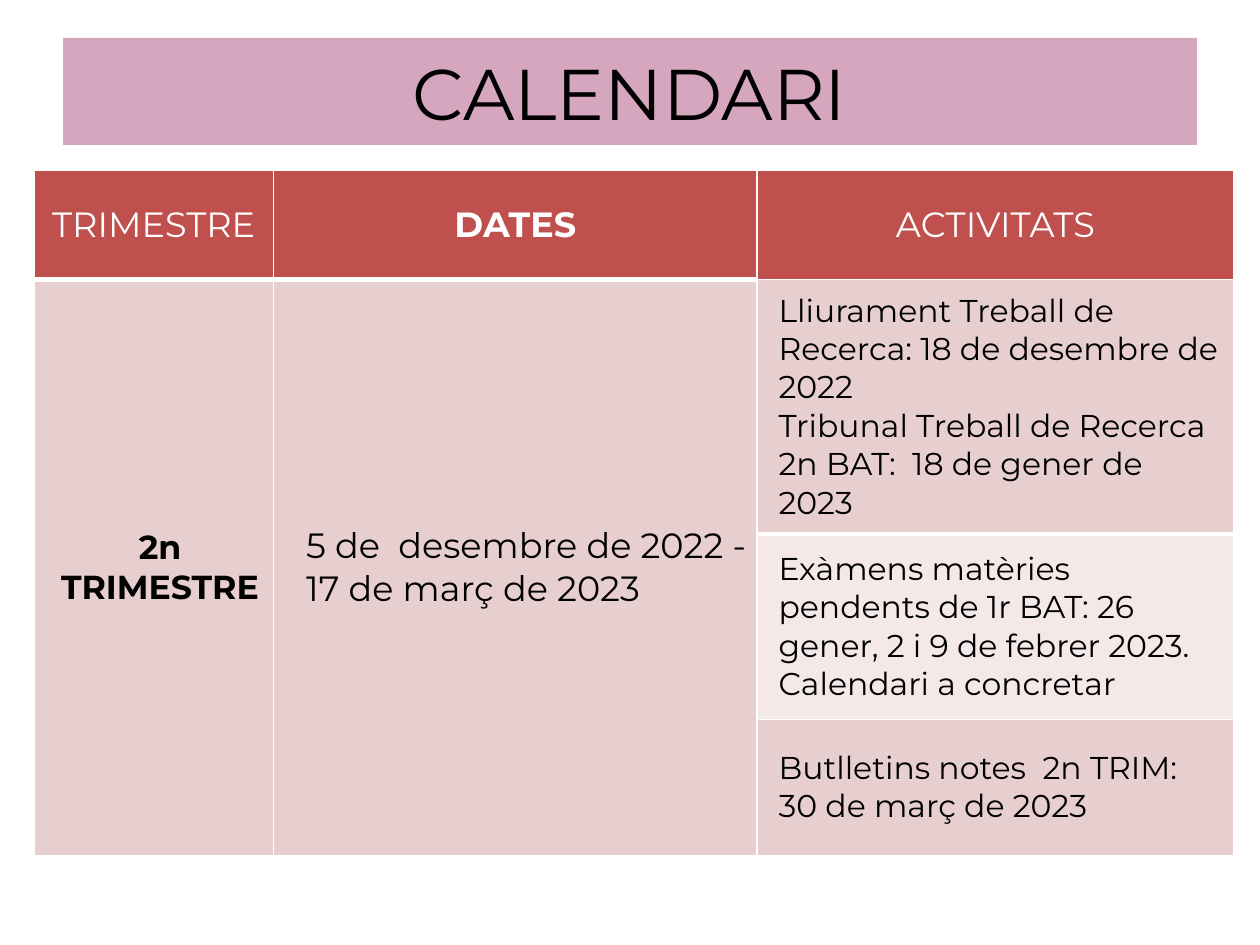
from lxml import etree
from pptx import Presentation
from pptx.dml.color import RGBColor
from pptx.enum.text import MSO_ANCHOR, PP_ALIGN
from pptx.oxml.ns import qn
from pptx.util import Inches, Pt

CENTER, LEFT = PP_ALIGN.CENTER, PP_ALIGN.LEFT
MIDDLE = MSO_ANCHOR.MIDDLE
FONT = "Montserrat"
WHITE, BLACK = "FFFFFF", "000000"
RED, ROSE, PALE, MAUVE = "C0504D", "E8CFCF", "F4E8E8", "D5A6BD"
COLS = [1.9, 3.84, 3.78]
ROWS = [0.87, 2.02, 1.47, 1.08]
HEADERS = [("TRIMESTRE", False), ("DATES", True), ("ACTIVITATS", False)]
DATES = ["5 de  desembre de 2022 -", "17 de març de 2023"]
ACTIVITIES = [
    (["Lliurament Treball de Recerca: 18 de desembre de 2022",
      "Tribunal Treball de Recerca 2n BAT:  18 de gener de 2023"], ROSE),
    (["Exàmens matèries pendents de 1r BAT: 26 gener, 2 i 9 de febrer 2023.",
      "Calendari a concretar"], PALE),
    (["Butlletins notes  2n TRIM:", "30 de març de 2023"], ROSE),
]


def rgb(value):
    return RGBColor.from_string(value)


def write(tf, lines, size, color=BLACK, bold=False, align=LEFT, margin=0, indent=0):
    tf.word_wrap = True
    for i, line in enumerate(lines):
        p = tf.paragraphs[0] if i == 0 else tf.add_paragraph()
        p.alignment = align
        pPr = p._p.get_or_add_pPr()
        pPr.set("marL", str(Inches(margin)))
        pPr.set("indent", str(Inches(indent)))
        r = p.add_run()
        r.text = line
        r.font.name, r.font.size, r.font.bold = FONT, Pt(size), bold
        r.font.color.rgb = rgb(color)


def set_borders(cell, top=1, bottom=1):
    tcPr = cell._tc.get_or_add_tcPr()
    widths = {"a:lnL": 1, "a:lnR": 1, "a:lnT": top, "a:lnB": bottom}
    for i, (tag, width) in enumerate(widths.items()):
        ln = etree.Element(qn(tag), w=str(Pt(width)))
        fill = etree.SubElement(ln, qn("a:solidFill"))
        etree.SubElement(fill, qn("a:srgbClr"), val=WHITE)
        tcPr.insert(i, ln)


def fill_cell(cell, lines, size, fill, side=0.07, top=1, bottom=1, **style):
    cell.fill.solid()
    cell.fill.fore_color.rgb = rgb(fill)
    cell.vertical_anchor = MIDDLE
    cell.margin_left = cell.margin_right = Inches(side)
    cell.margin_top = cell.margin_bottom = Inches(0.05)
    write(cell.text_frame, lines, size, **style)
    set_borders(cell, top, bottom)


def add_title(s, left, top, width, height):
    sp = s.shapes.title
    sp.left, sp.top, sp.width, sp.height = map(Inches, (left, top, width, height))
    sp.fill.solid()
    sp.fill.fore_color.rgb = rgb(MAUVE)
    sp.text_frame.vertical_anchor = MIDDLE
    write(sp.text_frame, ["CALENDARI"], 41, align=CENTER)


def add_calendar(s, left, top):
    frame = s.shapes.add_table(len(ROWS), len(COLS), Inches(left), Inches(top),
                               Inches(sum(COLS)), Inches(sum(ROWS)))
    table = frame.table
    for col, width in zip(table.columns, COLS):
        col.width = Inches(width)
    for row, height in zip(table.rows, ROWS):
        row.height = Inches(height)
    for c in (0, 1):
        table.cell(1, c).merge(table.cell(len(ROWS) - 1, c))
    for c, (text, bold) in enumerate(HEADERS):
        fill_cell(table.cell(0, c), [text], 20, RED, side=0.1, bottom=3 if c < 2 else 1,
                  color=WHITE, bold=bold, align=CENTER)
    fill_cell(table.cell(1, 0), ["2n TRIMESTRE"], 19, ROSE, side=0.1, top=3,
              bold=True, align=CENTER, margin=0.1)
    fill_cell(table.cell(1, 1), DATES, 20, ROSE, top=3, margin=0.1, indent=0.09)
    for i, (lines, fill) in enumerate(ACTIVITIES):
        fill_cell(table.cell(i + 1, 2), lines, 18, fill, top=3 if i == 1 else 1,
                  bottom=3 if i == 0 else 1, margin=0.1)


def main():
    prs = Presentation()
    prs.slide_width, prs.slide_height = Inches(10), Inches(7.5)
    s = prs.slides.add_slide(prs.slide_layouts[5])
    add_calendar(s, 0.27, 1.35)
    add_title(s, 0.5, 0.3, 9, 0.85)
    prs.save("out.pptx")


if __name__ == "__main__":
    main()
